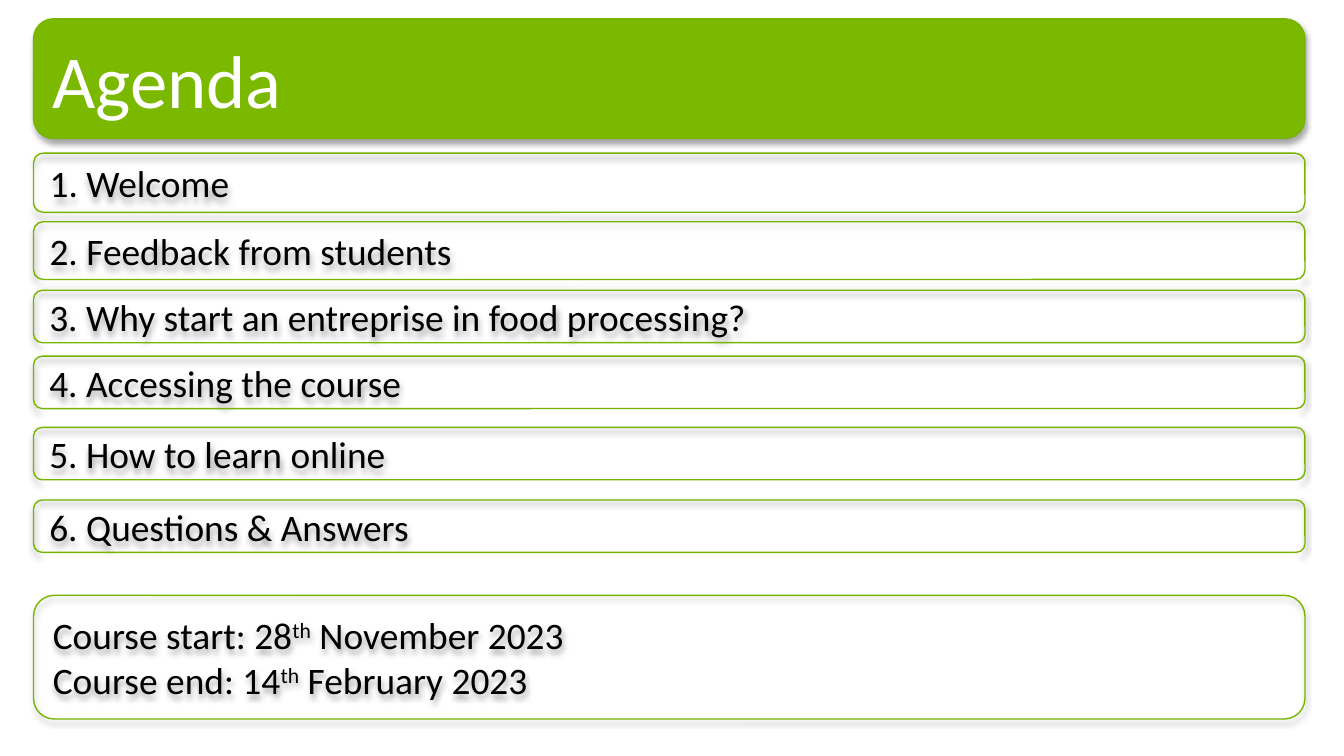
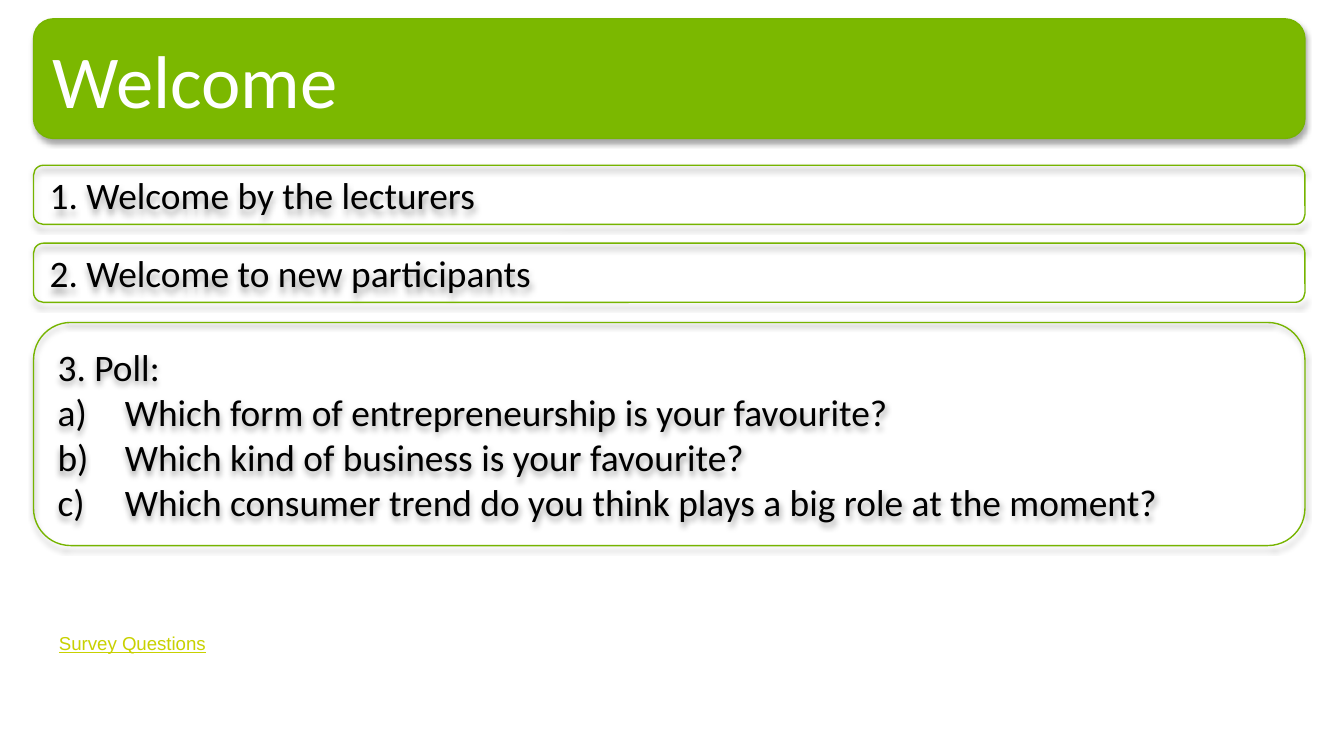
from lxml import etree
from pptx import Presentation
from pptx.dml.color import RGBColor
from pptx.enum.shapes import MSO_SHAPE
from pptx.enum.text import MSO_ANCHOR, MSO_AUTO_SIZE, PP_ALIGN
from pptx.oxml.ns import qn
from pptx.util import Inches, Pt

ROUNDED = MSO_SHAPE.ROUNDED_RECTANGLE
MIDDLE = MSO_ANCHOR.MIDDLE
LEFT = PP_ALIGN.LEFT
FIT_SHAPE = MSO_AUTO_SIZE.SHAPE_TO_FIT_TEXT

# Shared look
GREEN, BORDER, LIME = "7BB800", "76B400", "C8D100"
BLACK, WHITE = "000000", "FFFFFF"
FONT = "Calibri"
BOX_LEFT, BOX_WIDTH = 0.25, 9.46


def rgb(value):
    return RGBColor.from_string(value)


def add_shadow(sp):
    sp.shadow.inherit = False
    effects = sp._element.spPr.find(qn("a:effectLst"))
    shadow = etree.SubElement(effects, qn("a:outerShdw"), blurRad=str(Pt(3.1)),
                              dist=str(Pt(1.8)), dir="5400000", rotWithShape="0")
    color = etree.SubElement(shadow, qn("a:srgbClr"), val=BLACK)
    etree.SubElement(color, qn("a:alpha"), val="35000")


def style_run(r, size, color, font=FONT):
    r.font.size = Pt(size)
    r.font.name = font
    r.font.color.rgb = rgb(color)


def letter_paragraph(p):
    """Number a paragraph a), b), c) with a hanging indent."""
    pPr = p._p.get_or_add_pPr()
    pPr.set("marL", str(Inches(0.5)))
    pPr.set("indent", str(Inches(-0.5)))
    etree.SubElement(pPr, qn("a:buFont"), typeface="+mj-lt")
    etree.SubElement(pPr, qn("a:buAutoNum"), type="alphaLcParenR")


def add_box(slide, top, height, lines, size=20, color=BLACK, fill=None, lettered=False):
    """Rounded box; ^marks^ enclose superscripts, lettered numbers all lines but the first."""
    sp = slide.shapes.add_shape(ROUNDED, Inches(BOX_LEFT), Inches(top),
                                Inches(BOX_WIDTH), Inches(height))
    if fill:
        sp.fill.solid()
        sp.fill.fore_color.rgb = rgb(fill)
    else:
        sp.fill.background()
    sp.line.color.rgb = rgb(BORDER)
    sp.line.width = Pt(0.75)
    add_shadow(sp)

    tf = sp.text_frame
    tf.word_wrap = True
    tf.vertical_anchor = MIDDLE
    for i, line in enumerate(lines):
        p = tf.add_paragraph() if i else tf.paragraphs[0]
        p.alignment = LEFT
        if lettered and i:
            letter_paragraph(p)
        for j, part in enumerate(line.split("^")):
            r = p.add_run()
            r.text = part
            style_run(r, size, color)
            if j % 2:
                r.font._element.set("baseline", "30000")


def add_title(slide, title):
    add_box(slide, 0.14, 0.89, [title], size=40, color=WHITE, fill=GREEN)


def add_link_label(slide, text):
    box = slide.shapes.add_textbox(Inches(0.34), Inches(4.65), Inches(5.52), Inches(0.27))
    tf = box.text_frame
    tf.word_wrap = True
    tf.auto_size = FIT_SHAPE
    tf.text = text
    r = tf.paragraphs[0].runs[0]
    style_run(r, 10, LIME, "Arial")
    r.font.underline = True


def add_numbered_boxes(slide, items):
    for number, (text, top, height) in enumerate(items, 1):
        add_box(slide, top, height, [f"{number}. {text}"])


def add_slide(prs, title):
    slide = prs.slides.add_slide(prs.slide_layouts[6])
    add_title(slide, title)
    return slide


def main():
    prs = Presentation()
    prs.slide_width = Inches(10)
    prs.slide_height = Inches(10 * 9 / 16)

    # Agenda
    slide = add_slide(prs, "Agenda")
    add_numbered_boxes(slide, [
        ("Welcome", 1.14, 0.44),
        ("Feedback from students", 1.65, 0.43),
        ("Why start an entreprise in food processing?", 2.16, 0.39),
        ("Accessing the course", 2.65, 0.39),
        ("How to learn online", 3.18, 0.39),
        ("Questions & Answers", 3.72, 0.39),
    ])
    add_box(slide, 4.43, 0.92, ["Course start: 28^th^ November 2023",
                                "Course end: 14^th^ February 2023"])

    # Welcome
    slide = add_slide(prs, "Welcome")
    add_numbered_boxes(slide, [
        ("Welcome by the lecturers", 1.23, 0.44),
        ("Welcome to new participants", 1.81, 0.44),
    ])
    add_link_label(slide, "Survey Questions")
    add_box(slide, 2.4, 1.66, [
        "3. Poll:",
        "Which form of entrepreneurship is your favourite?",
        "Which kind of business is your favourite?",
        "Which consumer trend do you think plays a big role at the moment?",
    ], lettered=True)

    prs.save("out.pptx")


if __name__ == "__main__":
    main()
